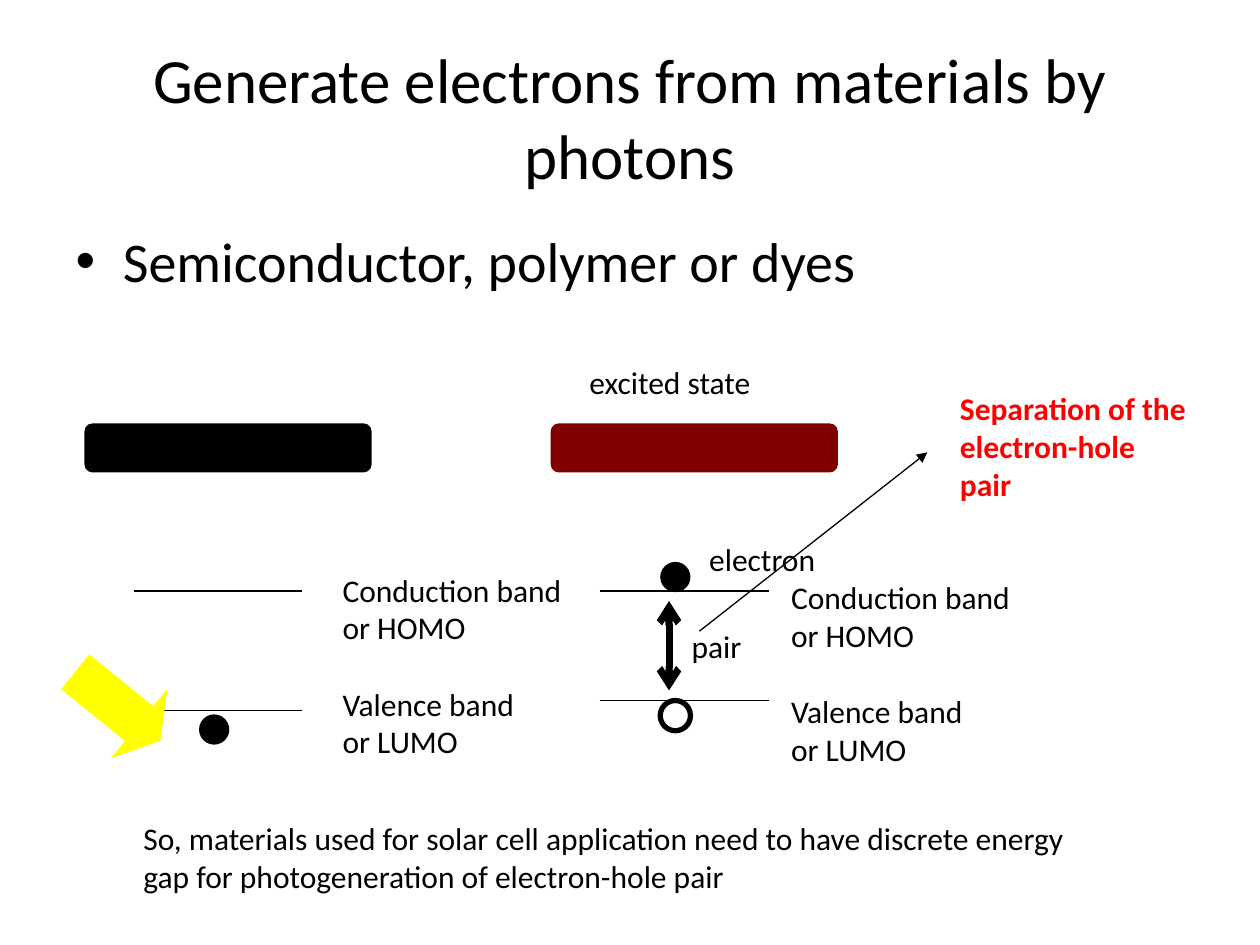
from dataclasses import dataclass

from lxml.etree import SubElement
from pptx import Presentation
from pptx.dml.color import RGBColor
from pptx.enum.shapes import MSO_CONNECTOR, MSO_SHAPE as SHAPE
from pptx.enum.text import MSO_ANCHOR, MSO_AUTO_SIZE, PP_ALIGN
from pptx.oxml.ns import qn
from pptx.util import Inches, Pt


@dataclass(frozen=True)
class Theme:
    font: str = "Calibri"
    ink: RGBColor = RGBColor(0, 0, 0)
    excited: RGBColor = RGBColor(0x80, 0, 0)
    light: RGBColor = RGBColor(0xFF, 0xFF, 0)
    accent: RGBColor = RGBColor(0xFF, 0, 0)
    title: int = 36
    body: int = 32
    label: int = 18
    thin: float = 0.75
    ring: float = 3
    thick: float = 4


THEME = Theme()
DOT = 0.24


def style(p, size, color=THEME.ink, bold=False):
    p.font.name = THEME.font
    p.font.size = Pt(size)
    p.font.color.rgb = color
    p.font.bold = bold


def fill_placeholder(sp, box, text, size, align, anchor):
    sp.left, sp.top, sp.width, sp.height = map(Inches, box)
    tf = sp.text_frame
    tf.auto_size = MSO_AUTO_SIZE.NONE
    tf.vertical_anchor = anchor
    tf.text = text
    p = tf.paragraphs[0]
    p.alignment = align
    p.space_before = Pt(0)
    style(p, size)


def add_label(s, box, lines, color=THEME.ink, bold=False, gap_before=()):
    """Write one paragraph per line, with a line's gap before the given indexes."""
    tf = s.shapes.add_textbox(*map(Inches, box)).text_frame
    tf.word_wrap = True
    for i, line in enumerate(lines):
        p = tf.add_paragraph() if i else tf.paragraphs[0]
        p.text = line
        if i in gap_before:
            p.space_before = Pt(THEME.label * 1.22)
        style(p, THEME.label, color, bold)


def add_filled(s, kind, box, color):
    sp = s.shapes.add_shape(kind, *map(Inches, box))
    sp.shadow.inherit = False
    sp.fill.solid()
    sp.fill.fore_color.rgb = color
    sp.line.fill.background()
    return sp


def add_line(s, start, end, width=THEME.thin, head=None, tail=None):
    ends = map(Inches, (*start, *end))
    line = s.shapes.add_connector(MSO_CONNECTOR.STRAIGHT, *ends)
    line.line.color.rgb = THEME.ink
    line.line.width = Pt(width)
    sp_pr = line._element.spPr
    for tag, kind in (("a:headEnd", head), ("a:tailEnd", tail)):
        if kind:
            SubElement(sp_pr.find(qn("a:ln")), qn(tag), type=kind)
    SubElement(sp_pr, qn("a:effectLst"))


def add_electron(s, x, y):
    add_filled(s, SHAPE.OVAL, (x, y, DOT, DOT), THEME.ink)


def add_hole(s, x, y):
    sp = add_filled(s, SHAPE.OVAL, (x, y, DOT, DOT), THEME.ink)
    sp.fill.background()
    sp.line.color.rgb = THEME.ink
    sp.line.width = Pt(THEME.ring)


def add_bands(s, x, y, color, valence_dy, label_dx, label_dy):
    """Draw a state bar, its two energy levels and the names of the bands."""
    add_filled(s, SHAPE.ROUNDED_RECTANGLE, (x, y, 2.28, 0.39), color)
    for dy in (1.33, valence_dy):
        add_line(s, (x + 0.39, y + dy), (x + 1.73, y + dy))
    add_label(s, (x + label_dx, y + label_dy, 2.09, 1.6),
              ["Conduction band", "or HOMO", "Valence band", "or LUMO"],
              gap_before=(2,))


def add_ground_state(s, x, y):
    add_bands(s, x, y, THEME.ink, 2.28, 1.95, 1.12)
    photon = add_filled(s, SHAPE.DOWN_ARROW, (x - 0.09, y + 1.81, 0.71, 0.87),
                        THEME.light)
    photon.adjustments[0] = 0.5
    photon.adjustments[1] = 0.305
    photon.rotation = 309.1
    add_electron(s, x + 0.91, y + 2.31)


def add_excited_state(s, x, y):
    add_bands(s, x, y, THEME.excited, 2.2, 1.81, 1.18)
    add_label(s, (x + 0.21, y - 0.53, 1.6, 0.4), ["excited state"])
    add_electron(s, x + 0.87, y + 1.1)
    add_hole(s, x + 0.87, y + 2.2)
    add_label(s, (x + 1.16, y + 0.88, 1.09, 0.4), ["electron"])
    add_line(s, (x + 0.94, y + 1.41), (x + 0.94, y + 2.12), THEME.thick,
             head="arrow", tail="arrow")
    add_label(s, (x + 1.02, y + 1.57, 0.62, 0.4), ["pair"])


def add_separation(s, x, y):
    add_line(s, (x - 1.97, y + 1.97), (x - 0.16, y + 0.55), tail="triangle")
    add_label(s, (x, y, 2.01, 1.01),
              ["Separation of the", "electron-hole", "pair"],
              THEME.accent, bold=True)


def add_conclusion(s, x, y):
    add_label(s, (x, y, 8.24, 0.7), [
        "So, materials used for solar cell application need to have discrete energy",
        "gap for photogeneration of electron-hole pair",
    ])


def main():
    prs = Presentation()
    prs.slide_width, prs.slide_height = Inches(10), Inches(7.5)
    s = prs.slides.add_slide(prs.slide_layouts[1])
    fill_placeholder(s.shapes.title, (0.5, 0.3, 9, 1.25),
                     "Generate electrons from materials by photons",
                     THEME.title, PP_ALIGN.CENTER, MSO_ANCHOR.MIDDLE)
    fill_placeholder(s.placeholders[1], (0.5, 1.75, 9, 4.95),
                     "Semiconductor, polymer or dyes",
                     THEME.body, PP_ALIGN.LEFT, MSO_ANCHOR.TOP)
    add_ground_state(s, 0.67, 3.36)
    add_excited_state(s, 4.37, 3.36)
    add_separation(s, 7.52, 3.04)
    add_conclusion(s, 1.04, 6.45)
    prs.save("out.pptx")


if __name__ == "__main__":
    main()
